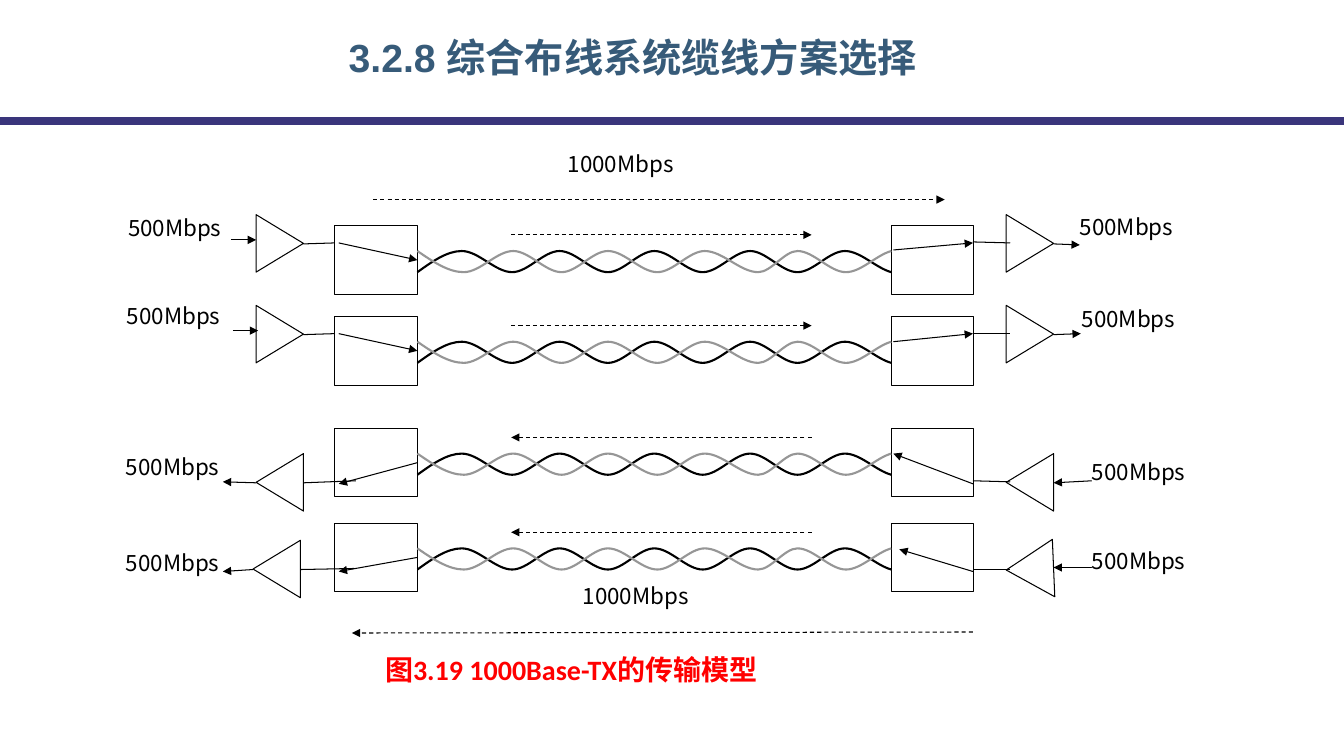
from itertools import pairwise

from lxml import etree
from pptx import Presentation
from pptx.dml.color import RGBColor
from pptx.enum.dml import MSO_LINE
from pptx.enum.shapes import MSO_CONNECTOR, MSO_SHAPE
from pptx.enum.text import MSO_ANCHOR, PP_ALIGN
from pptx.oxml.ns import qn
from pptx.util import Inches, Pt

BLACK, WHITE, GREY = "000000", "FFFFFF", "969696"
CJK_FONT = "Noto Sans CJK SC"

# Knots where each wire of a twisted pair reaches a crest or a trough
BLACK_WIRE = [4.14, 4.58, 5.08, 5.55, 6.03, 6.49, 6.97, 7.44, 7.91, 8.38, 8.84]
GREY_WIRE = [4.14, 4.6, 5.09, 5.57, 6.03, 6.52, 6.99, 7.52, 7.91, 8.39, 8.84]
WIRE_HEIGHT = 0.21

# Each pair: top of its boxes, amplifiers (left, drop, rotation), arrows and
# links as (x1, drop1, x2, drop2); every drop is measured from the box top
PAIRS = [
    (2.24,
     [(2.49, -0.06, 90), (9.93, -0.06, 90)],
     [(2.29, 0.14, 2.54, 0.14), (3.36, 0.17, 4.14, 0.34),
      (8.86, 0.24, 9.65, 0.17), (10.45, 0.18, 10.71, 0.19)],
     [(3.01, 0.18, 3.32, 0.17), (9.65, 0.16, 10.02, 0.17)],
     (5.07, 8.05)),
    (3.14,
     [(2.49, -0.06, 90), (9.93, -0.06, 90)],
     [(2.31, 0.14, 2.56, 0.14), (3.36, 0.17, 4.14, 0.34),
      (8.86, 0.25, 9.65, 0.17), (10.45, 0.18, 10.72, 0.17)],
     [(3.01, 0.18, 3.32, 0.17), (9.65, 0.17, 10.02, 0.17)],
     (5.07, 8.05)),
    (4.25,
     [(2.49, 0.3, 270), (9.93, 0.3, 270)],
     [(10.83, 0.52, 10.45, 0.54), (9.65, 0.55, 8.86, 0.25),
      (4.14, 0.34, 3.36, 0.55), (2.54, 0.54, 2.21, 0.53)],
     [(3.01, 0.54, 3.53, 0.52), (9.65, 0.52, 10.02, 0.53)],
     (8.05, 5.07)),
    (5.19,
     [(2.46, 0.22, 270), (9.93, 0.22, 267.6)],
     [(10.83, 0.44, 10.45, 0.44), (9.65, 0.48, 8.92, 0.26),
      (4.14, 0.34, 3.36, 0.48), (2.51, 0.46, 2.21, 0.48)],
     [(2.98, 0.46, 3.51, 0.45), (9.65, 0.46, 10.02, 0.46)],
     (8.05, 5.07)),
]

PORT_RATES = [(1.27, 2.12), (1.26, 3), (1.25, 4.5), (1.25, 5.45),
              (10.71, 2.11), (10.73, 3.03), (10.83, 4.55), (10.83, 5.43)]


def color(value):
    return RGBColor.from_string(value)


def add_line(slide, x1, y1, x2, y2, arrow=False, dashed=False,
             ink=BLACK, width=0.75):
    line = slide.shapes.add_connector(
        MSO_CONNECTOR.STRAIGHT, Inches(x1), Inches(y1), Inches(x2), Inches(y2))
    line.line.color.rgb = color(ink)
    line.line.width = Pt(width)
    if dashed:
        line.line.dash_style = MSO_LINE.DASH
    if arrow:
        etree.SubElement(line.line._get_or_add_ln(), qn("a:tailEnd"), type="triangle")
    etree.SubElement(line._element.spPr, qn("a:effectLst"))


def add_block(slide, kind, left, top, width, height, rotation=0):
    block = slide.shapes.add_shape(
        kind, Inches(left), Inches(top), Inches(width), Inches(height))
    block.rotation = rotation
    block.shadow.inherit = False
    block.fill.solid()
    block.fill.fore_color.rgb = color(WHITE)
    block.line.color.rgb = color(BLACK)
    block.line.width = Pt(0.75)
    return block


def add_label(slide, text, left, top, width, height, size=16, font=CJK_FONT,
              ink=BLACK, bold=False, inset=True, align=PP_ALIGN.JUSTIFY):
    label = slide.shapes.add_textbox(
        Inches(left), Inches(top), Inches(width), Inches(height))
    frame = label.text_frame
    frame.word_wrap = True
    frame.vertical_anchor = MSO_ANCHOR.TOP
    if not inset:
        frame.margin_left = frame.margin_right = 0
        frame.margin_top = frame.margin_bottom = 0
    paragraph = frame.paragraphs[0]
    paragraph.alignment = align
    run = paragraph.add_run()
    run.text = text
    run.font.size = Pt(size)
    run.font.name = font
    run.font.bold = bold
    run.font.color.rgb = color(ink)
    etree.SubElement(run._r.get_or_add_rPr(), qn("a:ea"), typeface=CJK_FONT)
    return label


def add_rate(slide, text, left, top, width):
    label = add_label(slide, text, left, top, width, 0.64, inset=False)
    label.fill.solid()
    label.fill.fore_color.rgb = color(WHITE)


def add_wire(slide, knots, top, starts_low, ink):
    """Draw a wave through the knots, flat at every crest and trough."""
    levels = [top + WIRE_HEIGHT * ((i + starts_low) % 2) for i in range(len(knots))]
    spans = list(pairwise(zip(knots, levels)))
    points = []
    for i, ((x1, y1), (x2, y2)) in enumerate(spans):
        third = (x2 - x1) / 3
        # The two loose ends slant instead of running flat
        lead = (y1 + y2) / 2 if i == 0 else y1
        land = y2 + (y1 - y2) * 0.2 if i == len(spans) - 1 else y2
        points += [(x1 + third, lead), (x2 - third, land), (x2, y2)]

    builder = slide.shapes.build_freeform(Inches(knots[0]), Inches(levels[0]))
    builder.add_line_segments([(Inches(x), Inches(y)) for x, y in points], close=False)
    wire = builder.convert_to_shape()
    wire.shadow.inherit = False
    wire.fill.background()
    wire.line.color.rgb = color(ink)
    wire.line.width = Pt(1.5)

    # Join every three straight steps into one curve
    steps = list(wire._element.iter(qn("a:lnTo")))
    outline = steps[0].getparent()
    for i in range(0, len(steps), 3):
        curve = etree.SubElement(outline, qn("a:cubicBezTo"))
        for step in steps[i:i + 3]:
            curve.append(step[0])
            outline.remove(step)


def add_pair(slide, top, amplifiers, arrows, links, direction):
    for left in (3.32, 8.84):
        add_block(slide, MSO_SHAPE.RECTANGLE, left, top, 0.82, 0.68)
    for left, drop, rotation in amplifiers:
        add_block(slide, MSO_SHAPE.ISOSCELES_TRIANGLE, left, top + drop,
                  0.57, 0.47, rotation)
    add_wire(slide, BLACK_WIRE, top + 0.25, True, BLACK)
    add_wire(slide, GREY_WIRE, top + 0.25, False, GREY)
    for lines, arrow in ((arrows, True), (links, False)):
        for x1, drop1, x2, drop2 in lines:
            add_line(slide, x1, top + drop1, x2, top + drop2, arrow)
    start, end = direction
    add_line(slide, start, top + 0.09, end, top + 0.09, arrow=True, dashed=True)


def main():
    prs = Presentation()
    prs.slide_width, prs.slide_height = Inches(13.33), Inches(7.5)
    slide = prs.slides.add_slide(prs.slide_layouts[6])

    # Heading and rule
    add_line(slide, 13.33, 1.2, 0, 1.2, ink="3A357B", width=5.75)
    add_label(slide, "3.2.8 综合布线系统缆线方案选择", 3.36, 0.28, 7.72, 0.63,
              28, "Arial", "375B79", bold=True, align=PP_ALIGN.LEFT)

    # Figure caption
    add_label(slide, "图3.19 1000Base-TX的传输模型", 3.72, 6.42, 4.99, 0.7,
              20, "Calibri", "FF0000", bold=True)

    # Four twisted pairs
    for pair in PAIRS:
        add_pair(slide, *pair)

    # Rates at the ports
    for left, top in PORT_RATES:
        add_rate(slide, "500Mbps", left, top, 0.96)

    # Total rate each way
    add_rate(slide, "1000Mbps", 5.63, 1.49, 1.42)
    add_line(slide, 3.7, 1.98, 9.37, 1.98, arrow=True, dashed=True)
    add_rate(slide, "1000Mbps", 5.78, 5.78, 1.27)
    add_line(slide, 9.65, 6.27, 3.49, 6.28, arrow=True, dashed=True)

    prs.save("out.pptx")


if __name__ == "__main__":
    main()
